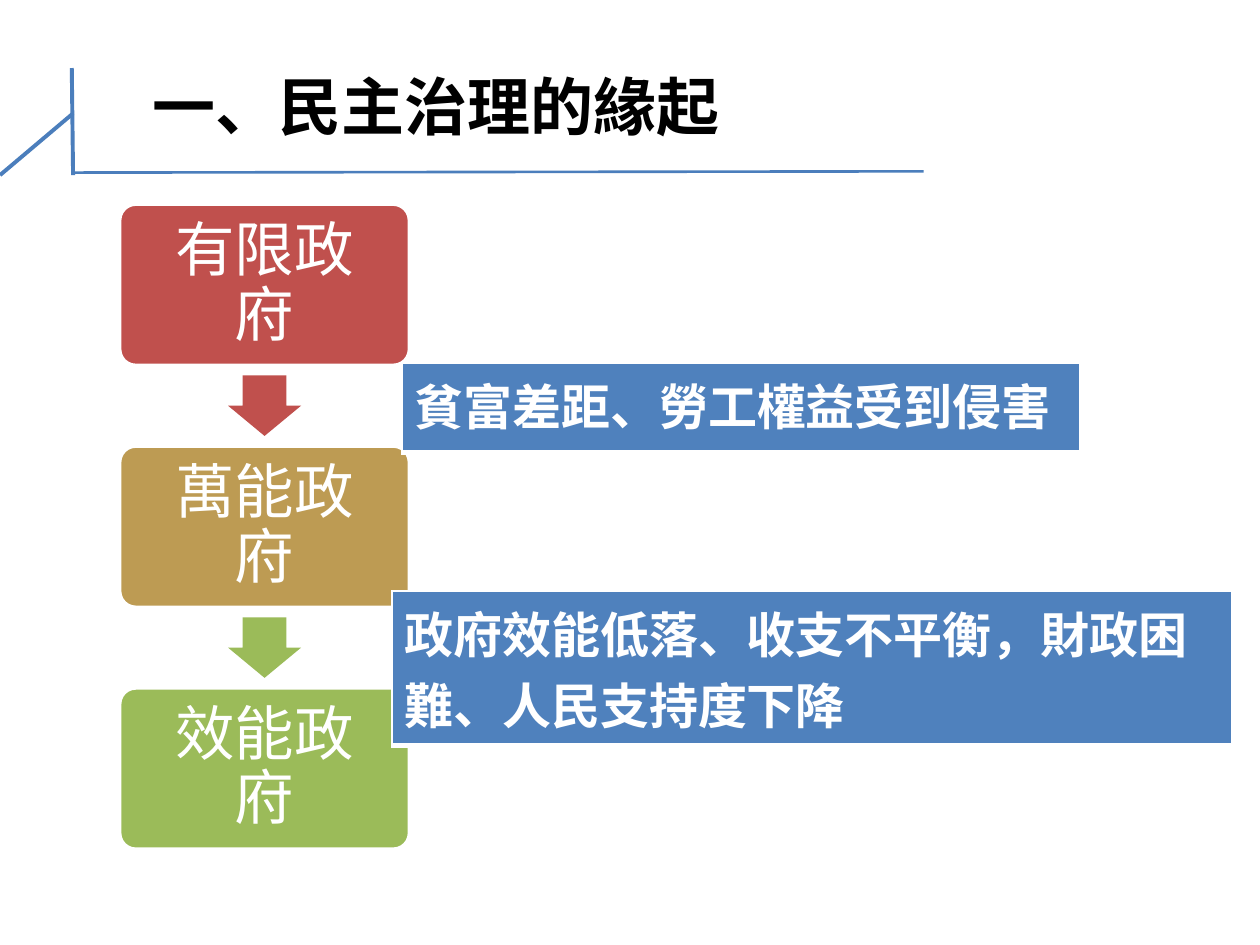
from lxml.etree import SubElement
from pptx import Presentation
from pptx.dml.color import RGBColor
from pptx.enum.shapes import MSO_CONNECTOR, MSO_SHAPE
from pptx.enum.text import MSO_ANCHOR, PP_ALIGN
from pptx.oxml import parse_xml
from pptx.oxml.ns import nsdecls, qn
from pptx.util import Inches, Pt

FONT = "Noto Sans CJK SC"
BLACK = RGBColor(0x00, 0x00, 0x00)
WHITE = RGBColor(0xFF, 0xFF, 0xFF)
RED = RGBColor(0xC0, 0x50, 0x4D)
GOLD = RGBColor(0xBD, 0x9B, 0x53)
GREEN = RGBColor(0x9B, 0xBB, 0x59)
BLUE = RGBColor(0x4F, 0x81, 0xBD)
LINE_BLUE = RGBColor(0x4B, 0x7E, 0xBC)

# Content
TITLE = "一、民主治理的緣起"
STAGES = [("有限政府", RED), ("萬能政府", GOLD), ("效能政府", GREEN)]
ARROW_COLORS = [RED, GREEN]
CAUSES = [  # text, left, top, width, height
    ("貧富差距、勞工權益受到侵害", 3.19, 2.88, 5.38, 0.71),
    ("政府效能低落、收支不平衡，財政困難、人民支持度下降", 3.11, 4.69, 6.67, 1.03),
]
TITLE_LINES = [  # start x, start y, end x, end y, weight
    (0, 1.39, 0.58, 0.9, 2.25),
    (0.57, 0.54, 0.58, 1.39, 2.25),
    (0.58, 1.37, 7.33, 1.36, 1.5),
]
BORDERS = [("L", 1), ("R", 1), ("T", 1), ("B", 3)]

# Stage column
STAGE_LEFT, STAGE_TOP, STAGE_WIDTH, STAGE_HEIGHT = 0.95, 1.62, 2.3, 1.28
STAGE_STEP = 1.92
ARROW_WIDTH, ARROW_HEIGHT = 0.58, 0.48


def add_text(para, text, size, color, bold=False):
    span = para.add_run()
    span.text = text
    span.font.name = FONT
    span.font.size = Pt(size)
    span.font.bold = bold
    span.font.color.rgb = color
    SubElement(span.font._element, qn("a:ea"), typeface=FONT)


def add_filled_shape(page, kind, left, top, width, height, color):
    shape = page.shapes.add_shape(
        kind, Inches(left), Inches(top), Inches(width), Inches(height))
    shape.shadow.inherit = False
    shape.fill.solid()
    shape.fill.fore_color.rgb = color
    return shape


def add_stage(page, text, color, top):
    box = add_filled_shape(page, MSO_SHAPE.ROUNDED_RECTANGLE, STAGE_LEFT, top,
                           STAGE_WIDTH, STAGE_HEIGHT, color)
    box.adjustments[0] = 0.1
    box.line.color.rgb = WHITE
    box.line.width = Pt(2)
    frame = box.text_frame
    frame.word_wrap = True
    frame.vertical_anchor = MSO_ANCHOR.MIDDLE
    frame.margin_left = frame.margin_right = Inches(0.18)
    frame.margin_top = frame.margin_bottom = Inches(0.18)
    para = frame.paragraphs[0]
    para.alignment = PP_ALIGN.CENTER
    para.line_spacing = 0.9
    add_text(para, text, 34, WHITE)


def add_arrow(page, color, stage_top):
    gap = STAGE_STEP - STAGE_HEIGHT
    arrow = add_filled_shape(
        page, MSO_SHAPE.DOWN_ARROW,
        STAGE_LEFT + (STAGE_WIDTH - ARROW_WIDTH) / 2,
        stage_top + STAGE_HEIGHT + (gap - ARROW_HEIGHT) / 2,
        ARROW_WIDTH, ARROW_HEIGHT, color)
    arrow.adjustments[0] = 0.6
    arrow.adjustments[1] = 0.5
    arrow.line.fill.background()


def add_cause(page, text, left, top, width, height):
    table = page.shapes.add_table(
        1, 1, Inches(left), Inches(top), Inches(width), Inches(height)).table
    cell = table.cell(0, 0)
    cell.fill.solid()
    cell.fill.fore_color.rgb = BLUE
    add_text(cell.text_frame.paragraphs[0], text, 28, WHITE, bold=True)
    properties = cell._tc.get_or_add_tcPr()
    for index, (side, weight) in enumerate(BORDERS):
        properties.insert(index, parse_xml(
            f'<a:ln{side} {nsdecls("a")} w="{Pt(weight)}"><a:solidFill>'
            f'<a:srgbClr val="{WHITE}"/></a:solidFill></a:ln{side}>'))


def add_title_line(page, start_x, start_y, end_x, end_y, weight):
    line = page.shapes.add_connector(
        MSO_CONNECTOR.STRAIGHT, Inches(start_x), Inches(start_y),
        Inches(end_x), Inches(end_y))
    line.line.color.rgb = LINE_BLUE
    line.line.width = Pt(weight)
    SubElement(line._element.spPr, qn("a:effectLst"))


def main():
    deck = Presentation()
    deck.slide_width, deck.slide_height = Inches(10), Inches(7.5)
    page = deck.slides.add_slide(deck.slide_layouts[5])

    # Title
    title = page.shapes.title
    title.left, title.top = Inches(0.5), Inches(0.21)
    title.width, title.height = Inches(5.92), Inches(1.25)
    title.text_frame.vertical_anchor = MSO_ANCHOR.MIDDLE
    para = title.text_frame.paragraphs[0]
    para.alignment = PP_ALIGN.CENTER
    add_text(para, TITLE, 36, BLACK, bold=True)

    # Stages with arrows between them
    tops = [STAGE_TOP + index * STAGE_STEP for index in range(len(STAGES))]
    for (text, color), top in zip(STAGES, tops):
        add_stage(page, text, color, top)
    for color, top in zip(ARROW_COLORS, tops):
        add_arrow(page, color, top)

    # Causes of each change
    for cause in CAUSES:
        add_cause(page, *cause)

    # Lines around the title
    for title_line in TITLE_LINES:
        add_title_line(page, *title_line)

    deck.save("out.pptx")


if __name__ == "__main__":
    main()
